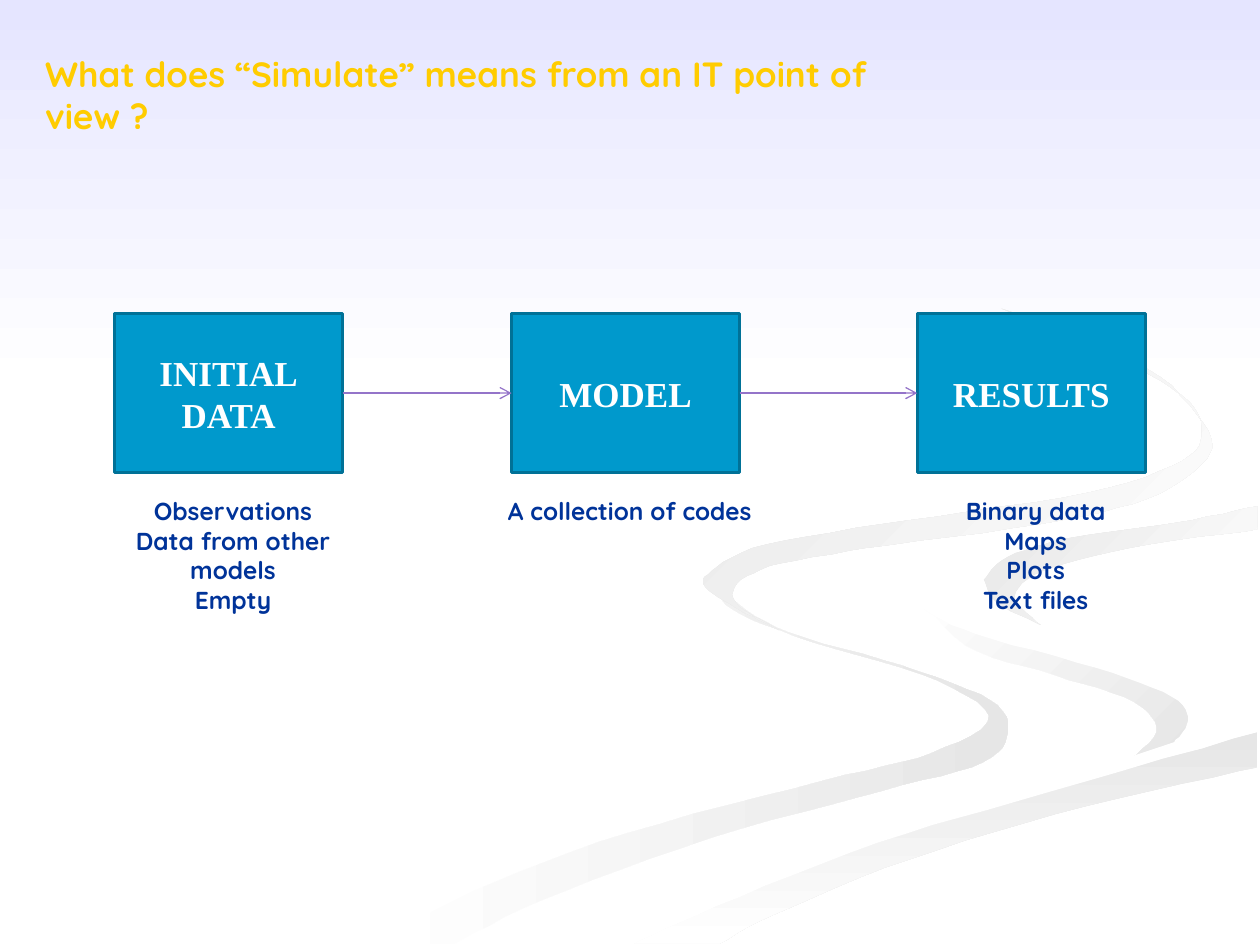
from dataclasses import dataclass

from lxml import etree
from pptx import Presentation
from pptx.dml.color import RGBColor
from pptx.enum.shapes import MSO_CONNECTOR, MSO_SHAPE
from pptx.enum.text import MSO_ANCHOR, PP_ALIGN
from pptx.oxml.ns import qn
from pptx.util import Inches, Pt

CENTER, LEFT = PP_ALIGN.CENTER, PP_ALIGN.LEFT
MIDDLE = MSO_ANCHOR.MIDDLE
RECTANGLE = MSO_SHAPE.RECTANGLE
STRAIGHT = MSO_CONNECTOR.STRAIGHT
RIGHT_SIDE, LEFT_SIDE = 3, 1


@dataclass(frozen=True)
class Theme:
    sky: str = "E5E5FF"
    white: str = "FFFFFF"
    mist: str = "E6E6E6"
    title: str = "FFCC00"
    box: str = "0099CC"
    box_edge: str = "007197"
    arrow: str = "9474C9"
    caption: str = "003399"
    sans: str = "Quicksand"
    serif: str = "Times New Roman"
    large: int = 20
    small: int = 14


THEME = Theme()
TO_MIST = (THEME.white, THEME.mist)
FROM_MIST = (THEME.mist, THEME.white)

BOX_TOP, BOX_WIDTH, BOX_HEIGHT = 2.49, 1.81, 1.26
CAPTION_TOP, CAPTION_WIDTH, CAPTION_SHIFT = 3.89, 2.2, -0.16
STEPS = [
    (0.91, ["INITIAL", "DATA"], ["Observations", "Data from other models", "Empty"], 1.04),
    (4.06, ["MODEL"], ["A collection of codes"], 0.57),
    (7.28, ["RESULTS"], ["Binary data", "Maps", "Plots", "Text files"], 1.04),
]

# Edges of the winding ribbons, in hundredths of an inch.
LEFT_OUTER = [(300, 749), (376, 707), (499, 661), (652, 620), (739, 598), (785, 568),
              (731, 535), (631, 505), (576, 480), (575, 459)]
LEFT_INNER = [(575, 459), (583, 477), (626, 502), (715, 528), (786, 556), (800, 581),
              (780, 605), (699, 628), (564, 665), (431, 714), (361, 749)]
MIDDLE_OUTER = [(724, 464), (733, 483), (774, 503), (870, 530), (930, 553), (943, 572),
                (932, 589)]
MIDDLE_TIP = [(932, 589), (894, 605)]
MIDDLE_INNER = [(894, 605), (918, 581), (900, 557), (838, 536), (766, 512), (724, 464)]
ROAD_WEST = [(932, 589), (843, 618), (704, 655), (573, 703), (477, 749)]
LOWER_TOP = [(503, 749), (569, 719), (696, 669), (831, 629), (998, 581)]
LOWER_BOTTOM = [(998, 609), (861, 640), (722, 682), (614, 726), (571, 749)]
ROAD_SOUTH = [(998, 538), (904, 519), (817, 492), (781, 460)]
RIGHT_TOP = [(781, 460), (800, 442), (849, 427), (933, 415), (998, 402)]
RIGHT_BOTTOM = [(998, 420), (896, 435), (828, 453), (805, 474), (826, 496)]
RIGHT_TIP = [(826, 496), (791, 478), (781, 460)]
ROAD_NORTH = [(998, 387), (920, 401), (808, 417), (742, 439), (724, 464)]
UPPER_OUTER = [(695, 434), (825, 416), (910, 396), (954, 368), (959, 342), (922, 300),
               (868, 272), (795, 245)]
UPPER_INNER = [(795, 245), (875, 277), (938, 314), (954, 342), (938, 366), (864, 391),
               (721, 413), (609, 432), (565, 453), (563, 469), (618, 500)]
UPPER_TIP = [(618, 500), (586, 481), (585, 463), (620, 447), (695, 434)]

BACKDROP = [
    ([[(0, 0), (0, 308)], [(1000, 308), (1000, 0)]], (THEME.sky, THEME.white), 90),
    ([LEFT_OUTER, LEFT_INNER], TO_MIST, 0),
    ([MIDDLE_OUTER, MIDDLE_TIP, MIDDLE_INNER], TO_MIST, 45),
    ([LOWER_TOP, LOWER_BOTTOM], FROM_MIST, 90),
    ([MIDDLE_OUTER, ROAD_WEST, LOWER_TOP, ROAD_SOUTH, RIGHT_TOP, ROAD_NORTH],
     (THEME.white, THEME.white), 0),
    ([RIGHT_TOP, RIGHT_BOTTOM, RIGHT_TIP], FROM_MIST, 45),
    ([UPPER_OUTER, UPPER_INNER, UPPER_TIP], FROM_MIST, 45),
]


def rgb(value):
    return RGBColor.from_string(value)


def smooth_edge(points, steps=6):
    """Pass a Catmull-Rom curve through the points."""
    if len(points) == 2:
        return points
    padded = [points[0], *points, points[-1]]
    curve = []
    for a, b, c, d in zip(padded, padded[1:], padded[2:], padded[3:]):
        for step in range(steps):
            t = step / steps
            curve.append(tuple(
                q + t * ((r - p) + t * ((2 * p - 5 * q + 4 * r - s)
                                        + t * (3 * q - p - 3 * r + s))) / 2
                for p, q, r, s in zip(a, b, c, d)))
    return curve + [points[-1]]


def add_backdrop_shape(page, edges, colors, angle):
    """Draw a shape bounded by edges; angle is the clockwise gradient direction."""
    outline = [point for edge in edges for point in smooth_edge(edge)]
    builder = page.shapes.build_freeform(*outline[0], scale=Inches(0.01))
    builder.add_line_segments(outline[1:], close=True)
    shape = builder.convert_to_shape()
    shape.shadow.inherit = False
    shape.line.fill.background()
    if colors[0] == colors[1]:
        shape.fill.solid()
        shape.fill.fore_color.rgb = rgb(colors[0])
        return
    shape.fill.gradient()
    shape.fill.gradient_angle = -angle % 360
    for stop, color, position in zip(shape.fill.gradient_stops, colors, (0, 1)):
        stop.color.rgb = rgb(color)
        stop.position = position


def write_lines(frame, lines, font_name, size, color, align):
    frame.word_wrap = True
    for index, line in enumerate(lines):
        para = frame.paragraphs[0] if index == 0 else frame.add_paragraph()
        para.text = line
        para.alignment = align
        para.font.name = font_name
        para.font.size = Pt(size)
        para.font.bold = True
        para.font.color.rgb = rgb(color)


def add_title(page, text):
    box = page.shapes.add_textbox(Inches(0.26), Inches(0.37), Inches(7.58), Inches(0.44))
    box.text_frame.margin_right = Inches(0.5)
    write_lines(box.text_frame, [text], THEME.sans, THEME.large, THEME.title, LEFT)


def add_step_box(page, left, lines):
    box = page.shapes.add_shape(RECTANGLE, Inches(left), Inches(BOX_TOP),
                                Inches(BOX_WIDTH), Inches(BOX_HEIGHT))
    box.shadow.inherit = False
    box.fill.solid()
    box.fill.fore_color.rgb = rgb(THEME.box)
    box.line.color.rgb = rgb(THEME.box_edge)
    box.line.width = Pt(2)
    box.text_frame.vertical_anchor = MIDDLE
    write_lines(box.text_frame, lines, THEME.serif, THEME.large, THEME.white, CENTER)
    return box


def add_caption(page, left, lines, height):
    box = page.shapes.add_textbox(Inches(left), Inches(CAPTION_TOP),
                                  Inches(CAPTION_WIDTH), Inches(height))
    write_lines(box.text_frame, lines, THEME.sans, THEME.small, THEME.caption, CENTER)


def add_arrow(page, source, target):
    arrow = page.shapes.add_connector(STRAIGHT, 0, 0, 0, 0)
    arrow.begin_connect(source, RIGHT_SIDE)
    arrow.end_connect(target, LEFT_SIDE)
    arrow.line.color.rgb = rgb(THEME.arrow)
    arrow.line.width = Pt(0.75)
    properties = arrow._element.spPr
    etree.SubElement(properties.find(qn("a:ln")), qn("a:tailEnd"), type="arrow")
    etree.SubElement(properties, qn("a:effectLst"))


def main():
    deck = Presentation()
    deck.slide_width, deck.slide_height = Inches(10), Inches(7.5)
    page = deck.slides.add_slide(deck.slide_layouts[6])
    for edges, colors, angle in BACKDROP:
        add_backdrop_shape(page, edges, colors, angle)
    add_title(page, "What does “Simulate” means from an IT point of view ?")
    previous = None
    for left, label, caption, height in STEPS:
        box = add_step_box(page, left, label)
        if previous is not None:
            add_arrow(page, previous, box)
        add_caption(page, left + CAPTION_SHIFT, caption, height)
        previous = box
    deck.save("out.pptx")


if __name__ == "__main__":
    main()
